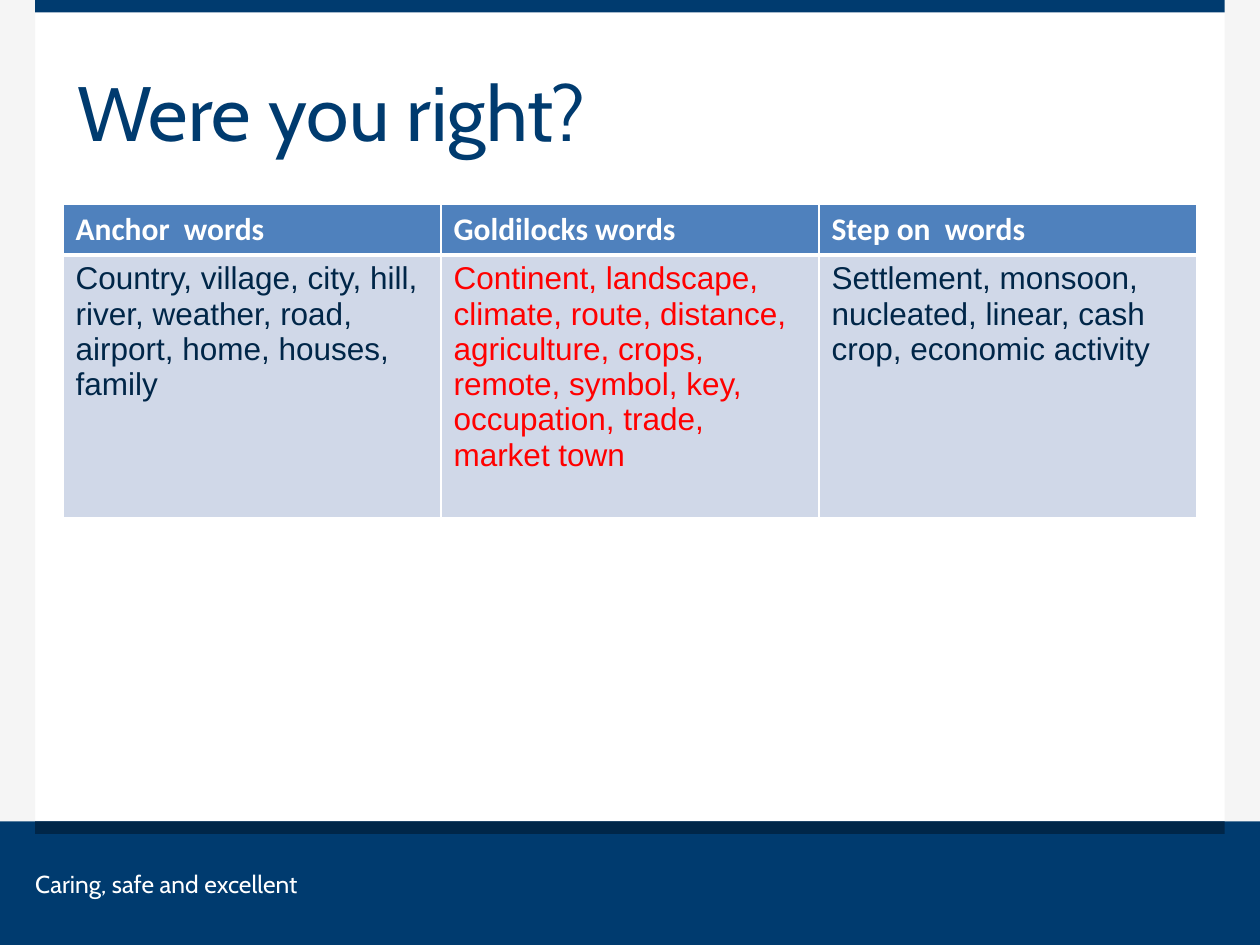
from pptx import Presentation
from pptx import util as u
from pptx.dml.color import RGBColor
from pptx.enum import shapes, text
from pptx.oxml import parse_xml
from pptx.oxml.ns import nsdecls

NAVY = RGBColor(0x00, 0x3B, 0x6F)
DARK = RGBColor(0x00, 0x26, 0x48)
GREY = RGBColor(0xF5, 0xF5, 0xF5)
WHITE = RGBColor(0xFF, 0xFF, 0xFF)
BLUE = RGBColor(0x4F, 0x81, 0xBD)
PALE = RGBColor(0xD0, 0xD8, 0xE8)
RED = RGBColor(0xFF, 0x00, 0x00)

WIDE, HIGH = 25.4, 19.05  # slide size in cm

WORDS = [
    ("Anchor  words", DARK,
     "Country, village, city, hill, river, weather, road, airport, home, "
     "houses, family"),
    ("Goldilocks words", RED,
     "Continent, landscape, climate, route, distance, agriculture, crops, "
     "remote, symbol, key, occupation, trade, market town"),
    ("Step on  words", DARK,
     "Settlement, monsoon, nucleated, linear, cash crop, economic activity"),
]


def place(item, x, y, w, h):
    item.left, item.top, item.width, item.height = map(u.Cm, (x, y, w, h))


def style(para, name, size, color, bold=False):
    for run in para.runs:
        font = run.font
        font.name, font.size, font.bold = name, u.Pt(size), bold
        font.color.rgb = color


def bar(slide, x, y, w, h, color):
    rect = slide.shapes.add_shape(shapes.MSO_SHAPE.RECTANGLE,
                                  *map(u.Cm, (x, y, w, h)))
    rect.shadow.inherit = False
    rect.fill.solid()
    rect.fill.fore_color.rgb = color
    rect.line.fill.background()


def frame(slide, w, h):
    side, foot, thin = 0.71, 2.49, 0.25
    top = h - foot
    # Side strips, footer band and the two thin bars
    for x in (0, w - side):
        bar(slide, x, 0, side, top, GREY)
    bar(slide, 0, top, w, foot, NAVY)
    for y, color in ((top, DARK), (0, NAVY)):
        bar(slide, side, y, w - 2 * side, thin, color)
    # Motto in the footer band
    box = slide.shapes.add_textbox(*map(u.Cm, (side, top + 0.96, 7.8, 0.61)))
    body = box.text_frame
    body.margin_left = body.margin_right = 0
    body.margin_top = body.margin_bottom = 0
    body.word_wrap = True
    body.text = "Caring, safe and excellent"
    style(body.paragraphs[0], "Cabin", 14, WHITE)


def head(slide, x, y, w, h):
    title = slide.shapes.title
    place(title, x, y, w, h)
    body = title.text_frame
    body.text = "Were you right?"
    body.auto_size = text.MSO_AUTO_SIZE.NONE
    body.vertical_anchor = text.MSO_ANCHOR.MIDDLE
    body.paragraphs[0].alignment = text.PP_ALIGN.LEFT
    style(body.paragraphs[0], "Cabin", 44, NAVY)


def edge(cell, base):
    """Draw white borders, with the given bottom width in points."""
    props = cell._tc.get_or_add_tcPr()
    for side, width in (("L", 1), ("R", 1), ("T", 1), ("B", base)):
        props.append(parse_xml(
            f'<a:ln{side} {nsdecls("a")} w="{u.Pt(width)}"><a:solidFill>'
            f'<a:srgbClr val="{WHITE}"/></a:solidFill></a:ln{side}>'))


def fill(cell, words, name, color, back, bold, base):
    edge(cell, base)
    cell.fill.solid()
    cell.fill.fore_color.rgb = back
    cell.text_frame.text = words
    style(cell.text_frame.paragraphs[0], name, 18, color, bold)


def grid(slide, x, y, w, h):
    table = slide.shapes.add_table(2, len(WORDS),
                                   *map(u.Cm, (x, y, w, h))).table
    top = 1.03
    table.rows[0].height = u.Cm(top)
    table.rows[1].height = u.Cm(h - top)
    for col, (label, color, words) in enumerate(WORDS):
        table.columns[col].width = u.Cm(w / len(WORDS))
        fill(table.cell(0, col), label, "Calibri", WHITE, BLUE, True, 3)
        fill(table.cell(1, col), words, "Arial", color, PALE, False, 1)
        # The same rule seen from the lower row
        table.cell(1, col)._tc.tcPr.find(
            "{*}lnT").set("w", str(u.Pt(3)))


def main():
    deck = Presentation()
    deck.slide_width, deck.slide_height = u.Cm(WIDE), u.Cm(HIGH)
    slide = deck.slides.add_slide(deck.slide_layouts[5])
    frame(slide, WIDE, HIGH)
    head(slide, 1.3, 0.64, 22.86, 3.2)
    grid(slide, 1.27, 4.11, 22.86, 6.33)
    deck.save("out.pptx")


if __name__ == "__main__":
    main()
